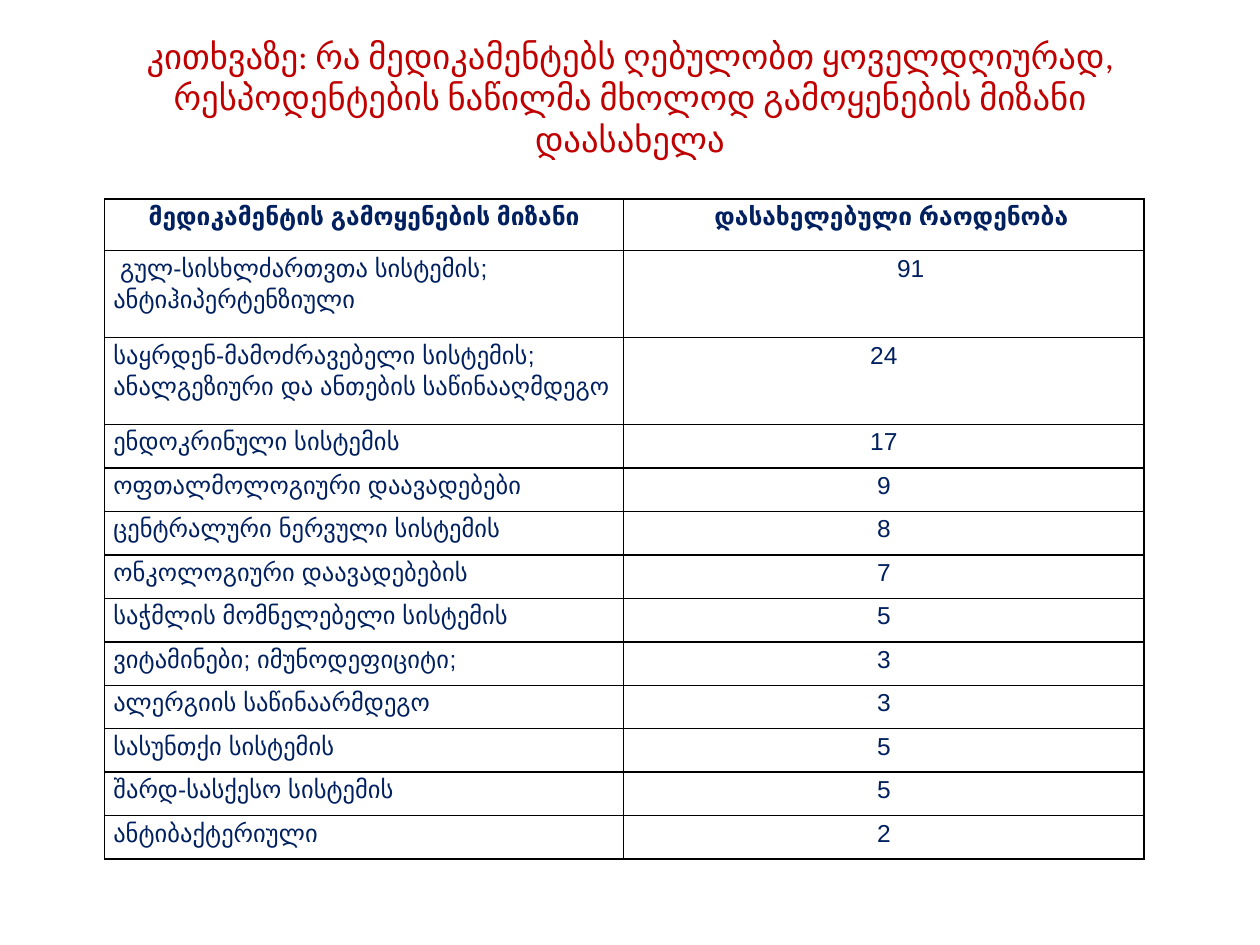
import pptx
import pptx.util
import pptx.dml.color
import pptx.enum.text
import pptx.oxml
import pptx.oxml.ns

# Content
TITLE = ("კითხვაზე: რა მედიკამენტებს ღებულობთ ყოველდღიურად, "
         "რესპოდენტების ნაწილმა მხოლოდ გამოყენების მიზანი დაასახელა")
ROWS = [
    ("მედიკამენტის გამოყენების მიზანი", "დასახელებული რაოდენობა"),
    (" გულ-სისხლძართვთა სისტემის; ანტიჰიპერტენზიული", "91"),
    ("საყრდენ-მამოძრავებელი სისტემის; ანალგეზიური და ანთების საწინააღმდეგო", "24"),
    ("ენდოკრინული სისტემის", "17"),
    ("ოფთალმოლოგიური დაავადებები", "9"),
    ("ცენტრალური ნერვული სისტემის", "8"),
    ("ონკოლოგიური დაავადებების", "7"),
    ("საჭმლის მომნელებელი სისტემის", "5"),
    ("ვიტამინები; იმუნოდეფიციტი;", "3"),
    ("ალერგიის საწინაარმდეგო", "3"),
    ("სასუნთქი სისტემის", "5"),
    ("შარდ-სასქესო სისტემის", "5"),
    ("ანტიბაქტერიული", "2"),
]
INK = {"title": "C00000", "text": "002060", "line": "000000"}

# Grid, in inches
WIDE, HIGH = 10, 7.5
LEFT, TOP, COLS = 0.83, 1.58, (4.12, 4.13)
TALLS = [0.41] + [0.69] * 2 + [0.345] * (len(ROWS) - 3)
PAD = 0.07
SHIFT = {(0, 0): 0.28, (0, 1): 0.65, (1, 1): 2.1}  # left-set cells, moved in

Inches, Pt = pptx.util.Inches, pptx.util.Pt
ALIGN = pptx.enum.text.PP_ALIGN


def style(par, face, size, ink, bold, align):
    par.alignment = align
    for run in par.runs:
        font = run.font
        font.name, font.size, font.bold = face, Pt(size), bold
        font.color.rgb = pptx.dml.color.RGBColor.from_string(INK[ink])


def border(cell):
    props = cell._tc.get_or_add_tcPr()
    for side in ("lnL", "lnR", "lnT", "lnB"):
        props.append(pptx.oxml.parse_xml(
            f'<a:{side} {pptx.oxml.ns.nsdecls("a")} w="{Pt(1)}"><a:solidFill>'
            f'<a:srgbClr val="{INK["line"]}"/></a:solidFill></a:{side}>'))


deck = pptx.Presentation()
deck.slide_width, deck.slide_height = Inches(WIDE), Inches(HIGH)
slide = deck.slides.add_slide(deck.slide_layouts[6])

# Title, set above the middle of its box
head = slide.shapes.add_textbox(
    Inches(WIDE * 0.05), Inches(HIGH * 0.04), Inches(WIDE * 0.9), Inches(1.25))
frame = head.text_frame
frame.word_wrap = True
frame.vertical_anchor = pptx.enum.text.MSO_ANCHOR.MIDDLE
frame.margin_left = frame.margin_right = Inches(0.15)
frame.margin_bottom = Inches(0.36)
frame.text = TITLE
style(frame.paragraphs[0], "Calibri", 19.8, "title", False, ALIGN.CENTER)

# Table
grid = slide.shapes.add_table(
    len(ROWS), len(COLS), Inches(LEFT), Inches(TOP),
    Inches(sum(COLS)), Inches(sum(TALLS))).table
for col, wide in zip(grid.columns, COLS):
    col.width = Inches(wide)
for row, tall in zip(grid.rows, TALLS):
    row.height = Inches(tall)

for r, words in enumerate(ROWS):
    for c, word in enumerate(words):
        cell = grid.cell(r, c)
        cell.margin_left = Inches(PAD + SHIFT.get((r, c), 0))
        cell.margin_right = Inches(PAD)
        cell.margin_top = cell.margin_bottom = 0
        cell.text = word
        par = cell.text_frame.paragraphs[0]
        par.line_spacing = 1.15
        mid = c == 1 and (r, c) not in SHIFT
        style(par, "Arial", 14, "text", r == 0,
              ALIGN.CENTER if mid else ALIGN.LEFT)
        border(cell)
        cell.fill.background()

deck.save("out.pptx")
